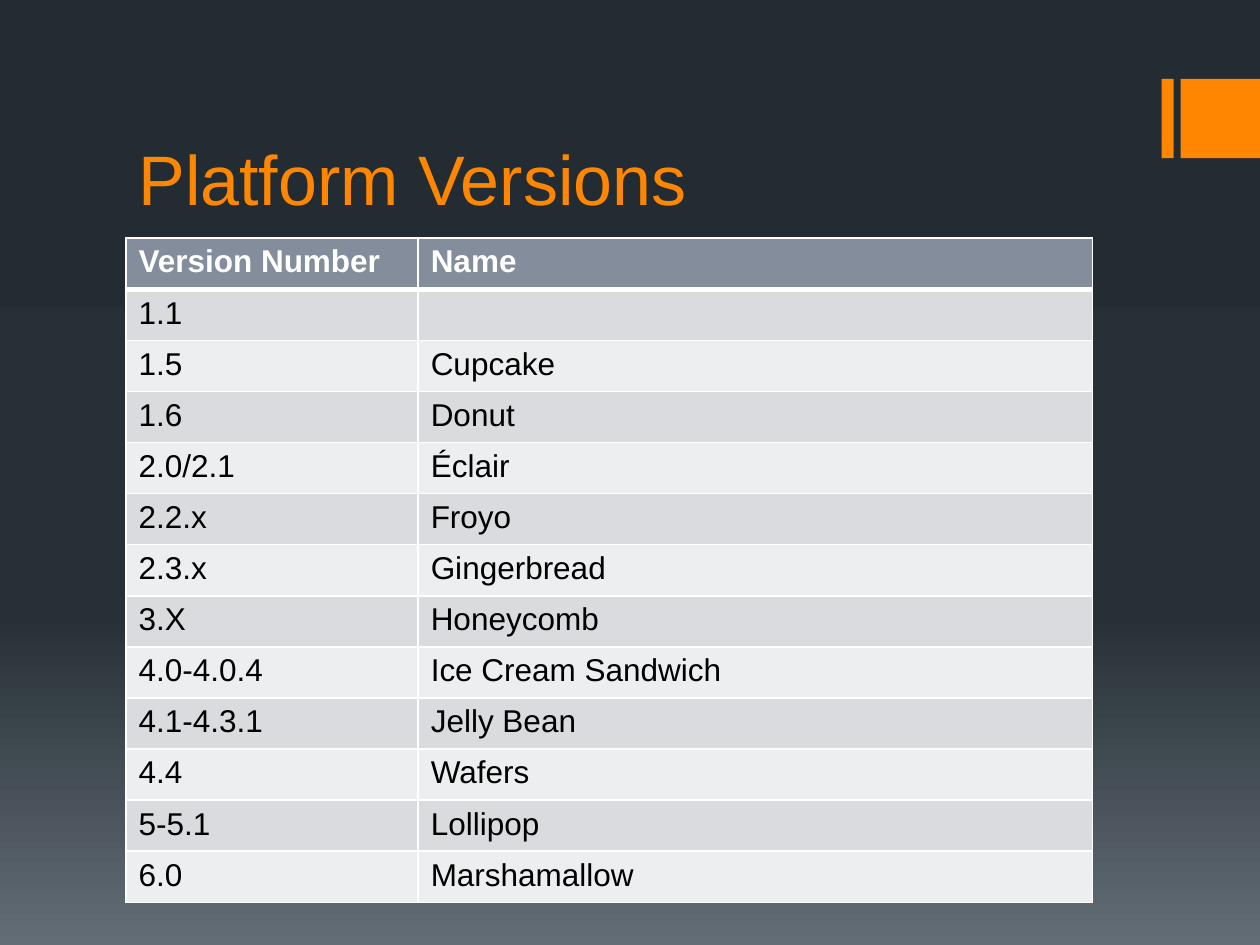
from dataclasses import dataclass

from lxml import etree
from pptx import Presentation
from pptx.dml.color import RGBColor
from pptx.enum.shapes import MSO_SHAPE
from pptx.enum.text import MSO_ANCHOR, MSO_AUTO_SIZE, PP_ALIGN
from pptx.oxml.ns import qn
from pptx.util import Cm, Pt

RECT = MSO_SHAPE.RECTANGLE
BOTTOM = MSO_ANCHOR.BOTTOM
LEFT = PP_ALIGN.LEFT
NO_AUTOFIT = MSO_AUTO_SIZE.NONE

FONT = "Arial"
ORANGE = "FF8600"
WHITE = "FFFFFF"
BLACK = "000000"
HEADER_FILL = "838D9B"
BAND_FILLS = ("EDEEEF", "D9DBDE")
BACKGROUND_STOPS = ((0, "242C33"), (65, "273037"), (100, "636D76"))
COL_WIDTHS = (5.89, 13.59)
ROW_HEIGHT = 1.03
THIN, THICK = 1, 3


@dataclass
class Bar:
    left: float
    width: float


@dataclass
class Version:
    number: str
    name: str


BARS = (Bar(23.42, 0.24), Bar(23.8, 1.6))

HEADER = Version("Version Number", "Name")
VERSIONS = (
    Version("1.1", ""),
    Version("1.5", "Cupcake"),
    Version("1.6", "Donut"),
    Version("2.0/2.1", "Éclair"),
    Version("2.2.x", "Froyo"),
    Version("2.3.x", "Gingerbread"),
    Version("3.X", "Honeycomb"),
    Version("4.0-4.0.4", "Ice Cream Sandwich"),
    Version("4.1-4.3.1", "Jelly Bean"),
    Version("4.4", "Wafers"),
    Version("5-5.1", "Lollipop"),
    Version("6.0", "Marshamallow"),
)


def rgb(color: str) -> RGBColor:
    return RGBColor.from_string(color)


def write(tf, text: str, size: float = 18, color: str = BLACK, bold: bool = False) -> None:
    p = tf.paragraphs[0]
    p.alignment = LEFT
    p.font.size = Pt(size)
    if not text:
        return
    r = p.add_run()
    r.text = text
    r.font.name = FONT
    r.font.size = Pt(size)
    r.font.bold = bold
    r.font.color.rgb = rgb(color)


def paint_background(s) -> None:
    fill = s.background.fill
    fill.gradient()
    fill.gradient_angle = 270
    stops = s.background._cSld.find(".//" + qn("a:gsLst"))
    for stop in list(stops):
        stops.remove(stop)
    for position, color in BACKGROUND_STOPS:
        stop = etree.SubElement(stops, qn("a:gs"), pos=str(position * 1000))
        etree.SubElement(stop, qn("a:srgbClr"), val=color)


def draw_bar(s, bar: Bar) -> None:
    sp = s.shapes.add_shape(RECT, Cm(bar.left), Cm(1.59), Cm(bar.width), Cm(1.6))
    sp.shadow.inherit = False
    sp.fill.solid()
    sp.fill.fore_color.rgb = rgb(ORANGE)
    sp.line.fill.background()


def set_title(s, text: str) -> None:
    sp = s.shapes.title
    sp.left, sp.top, sp.width, sp.height = Cm(2.54), Cm(1.47), Cm(20.32), Cm(3.2)
    tf = sp.text_frame
    tf.auto_size = NO_AUTOFIT
    tf.word_wrap = True
    tf.vertical_anchor = BOTTOM
    tf.margin_left = tf.margin_right = tf.margin_top = tf.margin_bottom = Cm(0.25)
    write(tf, text, size=40, color=ORANGE)


def set_borders(cell, top: float, bottom: float) -> None:
    tc_pr = cell._tc.get_or_add_tcPr()
    for side, width in (("L", THIN), ("R", THIN), ("T", top), ("B", bottom)):
        ln = etree.SubElement(tc_pr, qn(f"a:ln{side}"), w=str(Pt(width)))
        fill = etree.SubElement(ln, qn("a:solidFill"))
        etree.SubElement(fill, qn("a:srgbClr"), val=WHITE)


def draw_table(s, versions: tuple[Version, ...]) -> None:
    rows = (HEADER, *versions)
    table = s.shapes.add_table(
        len(rows), len(COL_WIDTHS), Cm(2.54), Cm(4.8),
        Cm(sum(COL_WIDTHS)), Cm(ROW_HEIGHT * len(rows)),
    ).table
    for column, width in zip(table.columns, COL_WIDTHS):
        column.width = Cm(width)
    for i, version in enumerate(rows):
        table.rows[i].height = Cm(ROW_HEIGHT)
        header = i == 0
        for j, text in enumerate((version.number, version.name)):
            cell = table.cell(i, j)
            set_borders(cell, THICK if i == 1 else THIN, THICK if header else THIN)
            cell.fill.solid()
            cell.fill.fore_color.rgb = rgb(HEADER_FILL if header else BAND_FILLS[i % 2])
            write(cell.text_frame, text, color=WHITE if header else BLACK, bold=header)


def main() -> None:
    prs = Presentation()
    prs.slide_width, prs.slide_height = Cm(25.4), Cm(19.05)
    s = prs.slides.add_slide(prs.slide_layouts[5])
    paint_background(s)
    for bar in BARS:
        draw_bar(s, bar)
    set_title(s, "Platform Versions")
    draw_table(s, VERSIONS)
    prs.save("out.pptx")


if __name__ == "__main__":
    main()
